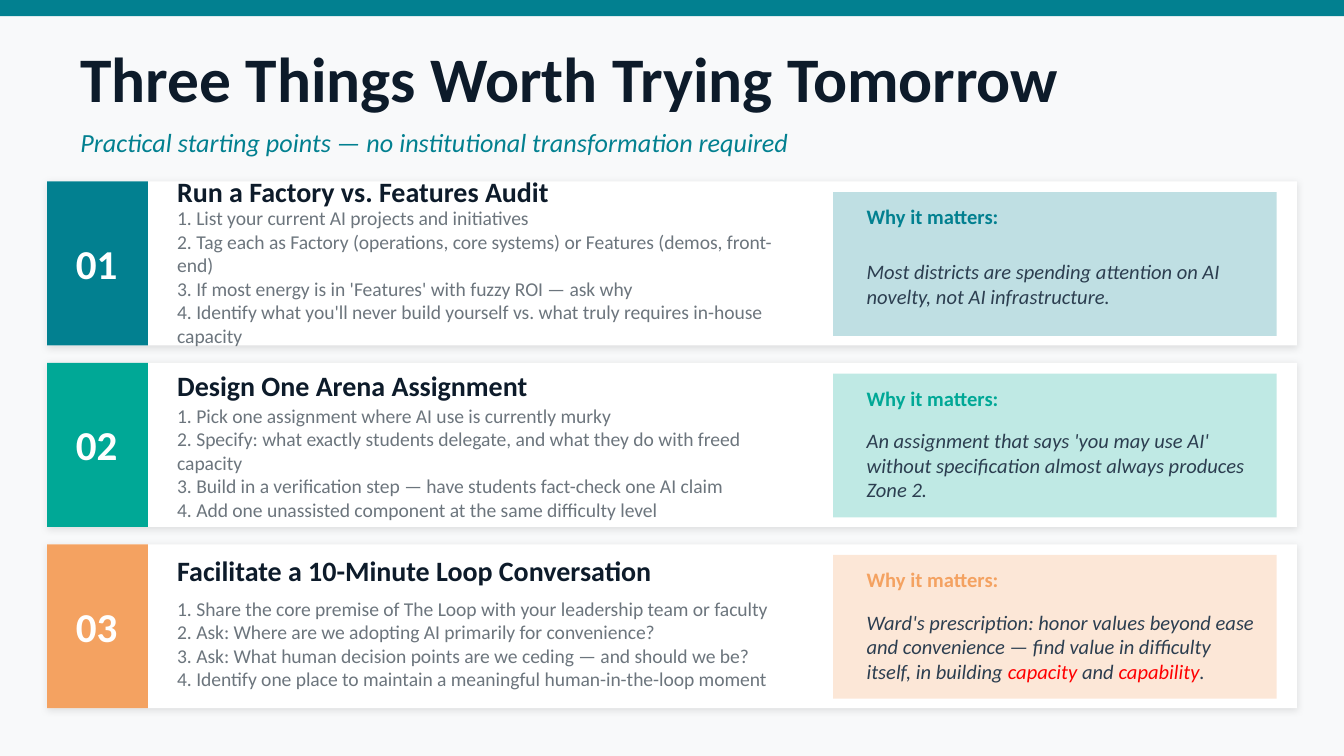
from dataclasses import dataclass

from lxml import etree
from pptx import Presentation
from pptx.dml.color import RGBColor
from pptx.enum.shapes import MSO_SHAPE
from pptx.enum.text import MSO_ANCHOR, MSO_AUTO_SIZE, PP_ALIGN
from pptx.oxml.ns import qn
from pptx.util import Inches, Pt

RECTANGLE = MSO_SHAPE.RECTANGLE
MIDDLE = MSO_ANCHOR.MIDDLE
NO_AUTOFIT = MSO_AUTO_SIZE.NONE
LEFT, CENTER = PP_ALIGN.LEFT, PP_ALIGN.CENTER
TITLE_ONLY = 5

SLIDE_WIDTH = Inches(10)
SLIDE_HEIGHT = SLIDE_WIDTH * 9 // 16
COLUMNS = 1000
ROWS = COLUMNS * 9 / 16


@dataclass(frozen=True)
class Theme:
    font: str = "Calibri"
    background: str = "F8F9FA"
    white: str = "FFFFFF"
    ink: str = "0D1B2A"
    muted: str = "6C757D"
    quote: str = "2C3E50"
    highlight: str = "FF0000"
    shadow: str = "000000"
    teal: str = "028090"
    green: str = "00A896"
    orange: str = "F4A261"
    title_size: float = 34
    number_size: float = 22
    heading_size: float = 15
    subtitle_size: float = 14
    reason_size: float = 11
    step_size: float = 10.5


THEME = Theme()


@dataclass(frozen=True)
class Box:
    """An area in columns and rows of the slide grid."""
    column: float
    row: float
    columns: float
    rows: float

    def inner(self, column, row, columns, rows):
        return Box(self.column + column, self.row + row, columns, rows)

    def lengths(self):
        across, down = SLIDE_WIDTH / COLUMNS, SLIDE_HEIGHT / ROWS
        return (round(self.column * across), round(self.row * down),
                round(self.columns * across), round(self.rows * down))


@dataclass(frozen=True)
class Idea:
    heading: str
    steps: tuple
    reason: tuple  # (wording, is highlighted)
    accent: str
    heading_row: int
    steps_row: int


IDEAS = (
    Idea("Run a Factory vs. Features Audit",
         ("List your current AI projects and initiatives",
          "Tag each as Factory (operations, core systems) or Features (demos, front-end)",
          "If most energy is in 'Features' with fuzzy ROI — ask why",
          "Identify what you'll never build yourself vs. what truly requires in-house capacity"),
         (("Most districts are spending attention on AI novelty, not AI infrastructure.", False),),
         THEME.teal, -15, 41),
    Idea("Design One Arena Assignment",
         ("Pick one assignment where AI use is currently murky",
          "Specify: what exactly students delegate, and what they do with freed capacity",
          "Build in a verification step — have students fact-check one AI claim",
          "Add one unassisted component at the same difficulty level"),
         (("An assignment that says 'you may use AI' without specification "
           "almost always produces Zone 2.", False),),
         THEME.green, -5, 44),
    Idea("Facilitate a 10-Minute Loop Conversation",
         ("Share the core premise of The Loop with your leadership team or faculty",
          "Ask: Where are we adopting AI primarily for convenience?",
          "Ask: What human decision points are we ceding — and should we be?",
          "Identify one place to maintain a meaningful human-in-the-loop moment"),
         (("Ward's prescription: honor values beyond ease and convenience — "
           "find value in difficulty itself, in building ", False),
          ("capacity", True), (" and ", False), ("capability", True), (".", False)),
         THEME.orange, -3, 44),
)


def add_block(slide, box, color, opacity=100):
    block = slide.shapes.add_shape(RECTANGLE, *box.lengths())
    block.shadow.inherit = False
    block.line.fill.background()
    block.fill.solid()
    block.fill.fore_color.rgb = RGBColor.from_string(color)
    if opacity < 100:
        tint = block._element.spPr.find(qn("a:solidFill")).find(qn("a:srgbClr"))
        etree.SubElement(tint, qn("a:alpha"), val=str(opacity * 1000))
    return block


def add_soft_shadow(block):
    effects = block._element.spPr.find(qn("a:effectLst"))
    shadow = etree.SubElement(effects, qn("a:outerShdw"), blurRad=str(Pt(4)),
                              dist=str(Pt(1)), dir=str(135 * 60000),
                              algn="bl", rotWithShape="0")
    color = etree.SubElement(shadow, qn("a:srgbClr"), val=THEME.shadow)
    etree.SubElement(color, qn("a:alpha"), val="9000")


def write(frame, paragraphs, size, align=LEFT, **style):
    """Fill a text frame; each paragraph is a list of (wording, colour)."""
    layout = {"word_wrap": True, "auto_size": NO_AUTOFIT, "vertical_anchor": MIDDLE}
    for name, value in layout.items():
        setattr(frame, name, value)
    font_format = {"name": THEME.font, "size": Pt(size), **style}
    for index, runs in enumerate(paragraphs):
        paragraph = frame.add_paragraph() if index else frame.paragraphs[0]
        paragraph.alignment = align
        for wording, color in runs:
            run = paragraph.add_run()
            run.text = wording
            run.font.color.rgb = RGBColor.from_string(color)
            for name, value in font_format.items():
                setattr(run.font, name, value)


def add_text(slide, box, paragraphs, size, **style):
    frame = slide.shapes.add_textbox(*box.lengths()).text_frame
    write(frame, paragraphs, size, **style)


def add_header(slide, box):
    add_block(slide, box.inner(0, 0, box.columns, 12), THEME.teal)
    title = slide.shapes.title
    title.left, title.top, title.width, title.height = box.inner(50, 25, 900, 65).lengths()
    write(title.text_frame, [[("Three Things Worth Trying Tomorrow", THEME.ink)]],
          THEME.title_size, bold=True)
    subtitle = "Practical starting points — no institutional transformation required"
    add_text(slide, box.inner(50, 88, 900, 35), [[(subtitle, THEME.teal)]],
             THEME.subtitle_size, italic=True)


def add_reason(slide, box, idea):
    add_block(slide, box, idea.accent, opacity=25)
    add_text(slide, box.inner(15, 2, 310, 32), [[("Why it matters:", idea.accent)]],
             THEME.reason_size, bold=True)
    runs = [(wording, THEME.highlight if marked else THEME.quote)
            for wording, marked in idea.reason]
    add_text(slide, box.inner(15, 34, 310, 68), [runs], THEME.reason_size, italic=True)


def add_card(slide, box, number, idea):
    add_soft_shadow(add_block(slide, box, THEME.white))
    add_block(slide, box.inner(0, 0, 75, box.rows), idea.accent)
    add_text(slide, box.inner(1, 38, 72, 45), [[(f"{number:02}", THEME.white)]],
             THEME.number_size, align=CENTER, bold=True)
    add_text(slide, box.inner(87, idea.heading_row, 480, 44),
             [[(idea.heading, THEME.ink)]], THEME.heading_size, bold=True)
    steps = [[(f"{place}. {step}", THEME.muted)] for place, step in enumerate(idea.steps, 1)]
    add_text(slide, box.inner(87, idea.steps_row, 470, 60), steps, THEME.step_size)
    add_reason(slide, box.inner(585, 8, 330, 107), idea)


def main():
    deck = Presentation()
    deck.slide_width, deck.slide_height = SLIDE_WIDTH, SLIDE_HEIGHT
    slide = deck.slides.add_slide(deck.slide_layouts[TITLE_ONLY])
    slide.background.fill.solid()
    slide.background.fill.fore_color.rgb = RGBColor.from_string(THEME.background)
    add_header(slide, Box(0, 0, COLUMNS, 123))
    first_card, pitch = Box(35, 135, 930, 122), 135
    for index, idea in enumerate(IDEAS):
        card = first_card.inner(0, index * pitch, first_card.columns, first_card.rows)
        add_card(slide, card, index + 1, idea)
    deck.save("out.pptx")


if __name__ == "__main__":
    main()
